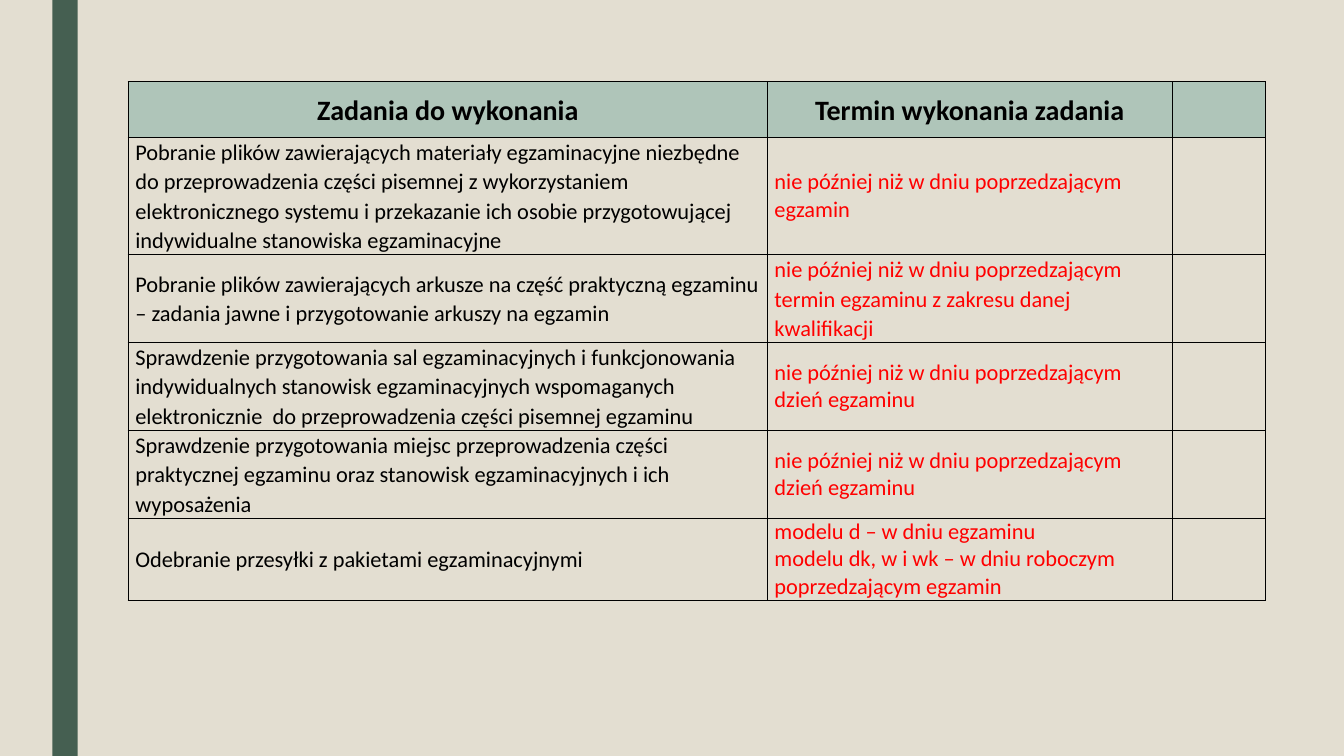
from lxml import etree
from pptx import Presentation
from pptx import util as u
from pptx.dml.color import RGBColor
from pptx.enum import shapes, text
from pptx.oxml import ns

SAND = RGBColor(0xE3, 0xDE, 0xD1)
FOREST = RGBColor(0x45, 0x5F, 0x51)
SAGE = RGBColor(0xAF, 0xC5, 0xB9)
BLACK = RGBColor(0, 0, 0)
RED = RGBColor(0xFF, 0, 0)

LOOSE = 1.07
SINGLE = 1.0

HEADINGS = ("Zadania do wykonania", "Termin wykonania zadania")
COLUMN_WIDTHS = (16.1, 10.2, 2.36)
HEADER_HEIGHT = 1.4

# Row height in cm, task, deadline, line spacing of the deadline
TASKS = (
    (2.34,
     "Pobranie plików zawierających materiały egzaminacyjne niezbędne do przeprowadzenia "
     "części pisemnej z wykorzystaniem elektronicznego systemu i przekazanie ich osobie "
     "przygotowującej indywidualne stanowiska egzaminacyjne",
     "nie później niż w dniu poprzedzającym egzamin", SINGLE),
    (1.65,
     "Pobranie plików zawierających arkusze na część praktyczną egzaminu – zadania jawne "
     "i przygotowanie arkuszy na egzamin",
     "nie później niż w dniu poprzedzającym termin egzaminu z zakresu danej kwalifikacji", LOOSE),
    (1.65,
     "Sprawdzenie przygotowania sal egzaminacyjnych i funkcjonowania indywidualnych stanowisk "
     "egzaminacyjnych wspomaganych elektronicznie  do przeprowadzenia części pisemnej egzaminu",
     "nie później niż w dniu poprzedzającym dzień egzaminu", SINGLE),
    (1.65,
     "Sprawdzenie przygotowania miejsc przeprowadzenia części praktycznej egzaminu oraz "
     "stanowisk egzaminacyjnych i ich wyposażenia",
     "nie później niż w dniu poprzedzającym dzień egzaminu", SINGLE),
    (1.65,
     "Odebranie przesyłki z pakietami egzaminacyjnymi",
     "modelu d – w dniu egzaminu\n"
     "modelu dk, w i wk – w dniu roboczym poprzedzającym egzamin", SINGLE),
)


class SlideBuilder:
    font_name = "Calibri"
    border_width = u.Pt(1)
    cell_margin = u.Cm(0.18)

    def __init__(self, slide):
        self.slide = slide

    def background(self, color):
        fill = self.slide.background.fill
        fill.solid()
        fill.fore_color.rgb = color

    def bar(self, left, top, width, height, color):
        shape = self.slide.shapes.add_shape(
            shapes.MSO_SHAPE.RECTANGLE, u.Cm(left), u.Cm(top), u.Cm(width), height)
        shape.shadow.inherit = False
        shape.fill.solid()
        shape.fill.fore_color.rgb = color
        shape.line.fill.background()

    def table(self, left, top, widths, heights):
        frame = self.slide.shapes.add_table(
            len(heights), len(widths), u.Cm(left), u.Cm(top),
            u.Cm(sum(widths)), u.Cm(sum(heights)))
        table = frame.table
        table.first_row = table.horz_banding = False
        for column, width in zip(table.columns, widths):
            column.width = u.Cm(width)
        for row, height in zip(table.rows, heights):
            row.height = u.Cm(height)
        for cell in table.iter_cells():
            self.borders(cell)
            cell.fill.background()
        return table

    def borders(self, cell):
        properties = cell._tc.get_or_add_tcPr()
        for side in ("a:lnL", "a:lnR", "a:lnT", "a:lnB"):
            line = etree.SubElement(properties, ns.qn(side), w=str(self.border_width))
            fill = etree.SubElement(line, ns.qn("a:solidFill"))
            etree.SubElement(fill, ns.qn("a:srgbClr"), val=str(BLACK))

    def cell_text(self, cell, content, size, color, spacing, bold=False, align=None):
        cell.margin_left = cell.margin_right = self.cell_margin
        cell.margin_top = cell.margin_bottom = 0
        cell.vertical_anchor = text.MSO_ANCHOR.MIDDLE
        cell.text_frame.text = content
        for paragraph in cell.text_frame.paragraphs:
            paragraph.alignment = align
            paragraph.line_spacing = spacing
            for run in paragraph.runs:
                run.font.name = self.font_name
                run.font.size = u.Pt(size)
                run.font.bold = bold
                run.font.color.rgb = color


def main():
    presentation = Presentation()
    presentation.slide_width = u.Inches(13.33)
    presentation.slide_height = u.Inches(7.5)
    builder = SlideBuilder(presentation.slides.add_slide(presentation.slide_layouts[6]))

    # Background and side bar
    builder.background(SAND)
    builder.bar(1.32, 0, 0.64, presentation.slide_height, FOREST)

    # Schedule grid
    heights = [HEADER_HEIGHT] + [task[0] for task in TASKS]
    table = builder.table(3.23, 2.06, COLUMN_WIDTHS, heights)

    # Header row
    for cell in table.rows[0].cells:
        cell.fill.solid()
        cell.fill.fore_color.rgb = SAGE
    for column, heading in enumerate(HEADINGS):
        builder.cell_text(table.cell(0, column), heading, 20, BLACK, LOOSE,
                          bold=True, align=text.PP_ALIGN.CENTER)

    # Tasks and deadlines
    for row, (_, task, deadline, spacing) in enumerate(TASKS, start=1):
        builder.cell_text(table.cell(row, 0), task, 16, BLACK, LOOSE)
        builder.cell_text(table.cell(row, 1), deadline, 16, RED, spacing)

    presentation.save("out.pptx")


if __name__ == "__main__":
    main()
